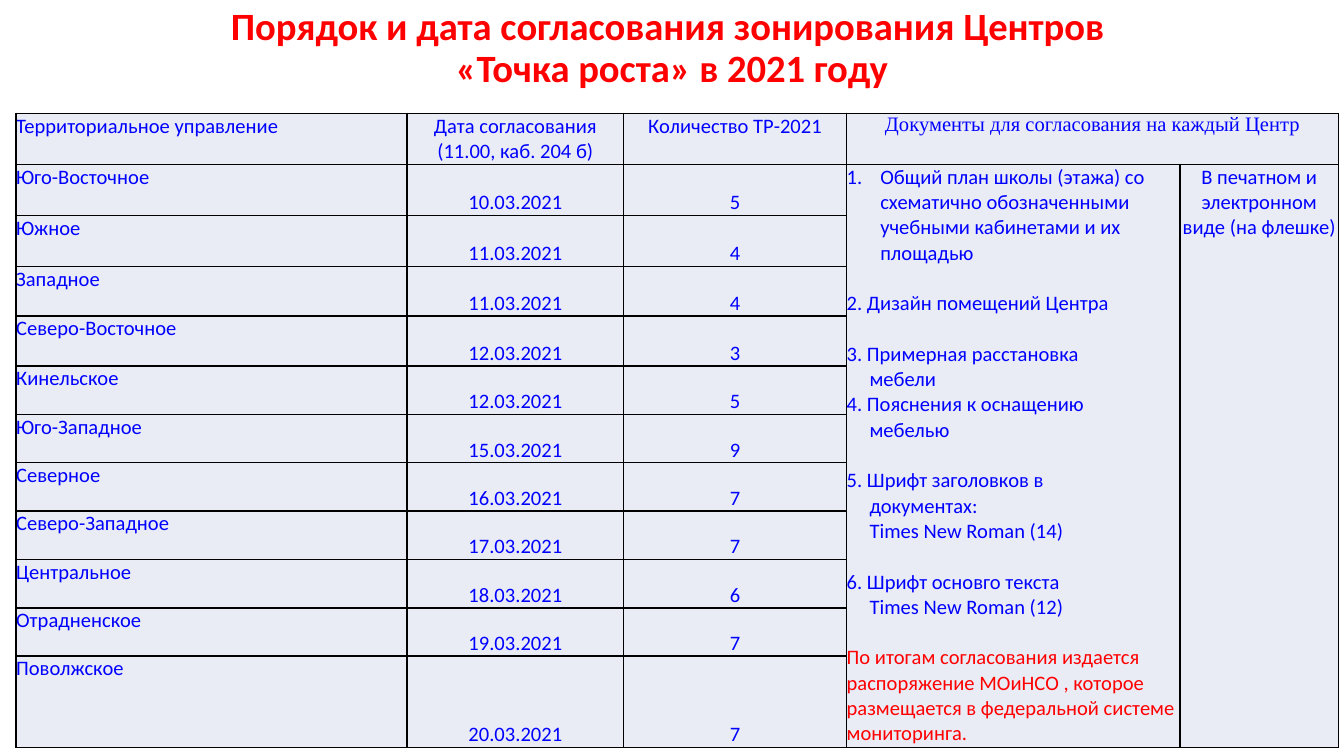
from dataclasses import dataclass

from lxml import etree
from pptx import Presentation
from pptx.dml.color import RGBColor
from pptx.enum.text import MSO_ANCHOR, PP_ALIGN
from pptx.oxml.ns import qn
from pptx.util import Inches, Pt

LEFT, MID = PP_ALIGN.LEFT, PP_ALIGN.CENTER
TOP, CENTER, BOTTOM = MSO_ANCHOR.TOP, MSO_ANCHOR.MIDDLE, MSO_ANCHOR.BOTTOM
WIDE = Inches(10)
HIGH = WIDE * 9 // 16
COLORS = {"red": "FF0000", "blue": "0000FF", "cell": "E9EBF5", "line": "000000"}
SIZE = 11
GAP = 13.5  # one line of table text, in points
COLS = [2.91, 1.61, 1.66, 2.48, 1.18]
ROWS = [0.38] * 3 + [0.37] * 2 + [0.36] * 6 + [0.68]


@dataclass
class Line:
    """A paragraph; a newline in its text is a line break."""
    text: str
    align: int = LEFT
    color: str = "blue"
    font: str = "Calibri"
    size: float = SIZE
    bold: bool = False
    gap: float = 0
    indent: float = 0
    number: bool = False


@dataclass
class Office:
    name: str
    day: str
    count: int


OFFICES = [
    Office("Юго-Восточное", "10.03.2021", 5),
    Office("Южное", "11.03.2021", 4),
    Office("Западное", "11.03.2021", 4),
    Office("Северо-Восточное", "12.03.2021", 3),
    Office("Кинельское", "12.03.2021", 5),
    Office("Юго-Западное", "15.03.2021", 9),
    Office("Северное", "16.03.2021", 7),
    Office("Северо-Западное", "17.03.2021", 7),
    Office("Центральное", "18.03.2021", 6),
    Office("Отрадненское", "19.03.2021", 7),
    Office("Поволжское", "20.03.2021", 7),
]
HEADS = [
    [Line("Территориальное управление")],
    [Line("Дата согласования", MID), Line("(11.00, каб. 204 б)", MID)],
    [Line("Количество ТР-2021", MID)],
    [Line("Документы для согласования на каждый Центр", MID, font="Times New Roman")],
]
PAPERS = [
    Line("Общий план школы (этажа) со схематично обозначенными "
         "учебными кабинетами и их площадью", indent=0.25, number=True),
    Line("2. Дизайн помещений Центра", gap=GAP),
    Line("3. Примерная расстановка", gap=GAP),
    Line("мебели", indent=0.17),
    Line("4. Пояснения к оснащению"),
    Line("мебелью", indent=0.17),
    Line("5. Шрифт заголовков в", gap=GAP),
    Line("документах:", indent=0.17),
    Line("Times New Roman (14)", indent=0.17),
    Line("6. Шрифт основго текста", gap=GAP),
    Line("Times New Roman (12)", indent=0.17),
    Line("По итогам согласования издается распоряжение МОиНСО , которое "
         "размещается в федеральной системе мониторинга.", color="red", gap=GAP),
]
FORMAT = [Line("В печатном и электронном виде (на флешке)", MID)]
TITLE = [Line("Порядок и дата согласования зонирования Центров \n"
              "«Точка роста» в 2021 году", MID, "red", size=20.7, bold=True)]


def write(frame, lines: list[Line], space: float = 1) -> None:
    for i, line in enumerate(lines):
        para = frame.add_paragraph() if i else frame.paragraphs[0]
        para.alignment = line.align
        para.line_spacing = space
        para.space_before = Pt(line.gap)
        props = para._p.get_or_add_pPr()
        if line.indent:
            props.set("marL", str(Inches(line.indent)))
        if line.number:
            props.set("indent", str(-Inches(line.indent)))
            etree.SubElement(props, qn("a:buAutoNum"), type="arabicPeriod")
        for j, text in enumerate(line.text.split("\n")):
            if j:
                para.add_line_break()
            run = para.add_run()
            run.text = text
            font = run.font
            font.name, font.size, font.bold = line.font, Pt(line.size), line.bold
            font.color.rgb = RGBColor.from_string(COLORS[line.color])


def style(cell) -> None:
    """Give a cell its fill, black borders and zero margins."""
    cell.margin_left = cell.margin_right = cell.margin_top = cell.margin_bottom = 0
    cell.fill.solid()
    cell.fill.fore_color.rgb = RGBColor.from_string(COLORS["cell"])
    props = cell._tc.get_or_add_tcPr()
    for i, side in enumerate("LRTB"):
        edge = etree.Element(qn(f"a:ln{side}"), w=str(Pt(1)))
        fill = etree.SubElement(edge, qn("a:solidFill"))
        etree.SubElement(fill, qn("a:srgbClr"), val=COLORS["line"])
        props.insert(i, edge)


def put(cell, lines: list[Line], anchor: int = TOP) -> None:
    cell.vertical_anchor = anchor
    write(cell.text_frame, lines)


def add_title(slide) -> None:
    box = slide.shapes.add_textbox(
        int(WIDE * 0.02), int(HIGH * 0.01), int(WIDE * 0.96), int(HIGH * 0.11))
    frame = box.text_frame
    frame.word_wrap = True
    frame.vertical_anchor = CENTER
    write(frame, TITLE, 0.9)


def add_plan(slide) -> None:
    shape = slide.shapes.add_table(
        len(ROWS), len(COLS), int(WIDE * 0.012), int(HIGH * 0.15),
        Inches(sum(COLS)), Inches(sum(ROWS)))
    table = shape.table
    table.first_row = table.horz_banding = False
    for col, width in zip(table.columns, COLS):
        col.width = Inches(width)
    for row, height in zip(table.rows, ROWS):
        row.height = Inches(height)
    for cell in table.iter_cells():
        style(cell)

    last = len(ROWS) - 1
    table.cell(0, 3).merge(table.cell(0, 4))
    for col, lines in ((3, PAPERS), (4, FORMAT)):
        table.cell(1, col).merge(table.cell(last, col))
        put(table.cell(1, col), lines)
    for col, lines in enumerate(HEADS):
        put(table.cell(0, col), lines)
    for row, office in enumerate(OFFICES, 1):
        put(table.cell(row, 0), [Line(office.name)])
        put(table.cell(row, 1), [Line(office.day, MID)], BOTTOM)
        put(table.cell(row, 2), [Line(str(office.count), MID)], BOTTOM)


def main() -> None:
    deck = Presentation()
    deck.slide_width, deck.slide_height = WIDE, HIGH
    slide = deck.slides.add_slide(deck.slide_layouts[6])
    add_title(slide)
    add_plan(slide)
    deck.save("out.pptx")


if __name__ == "__main__":
    main()
